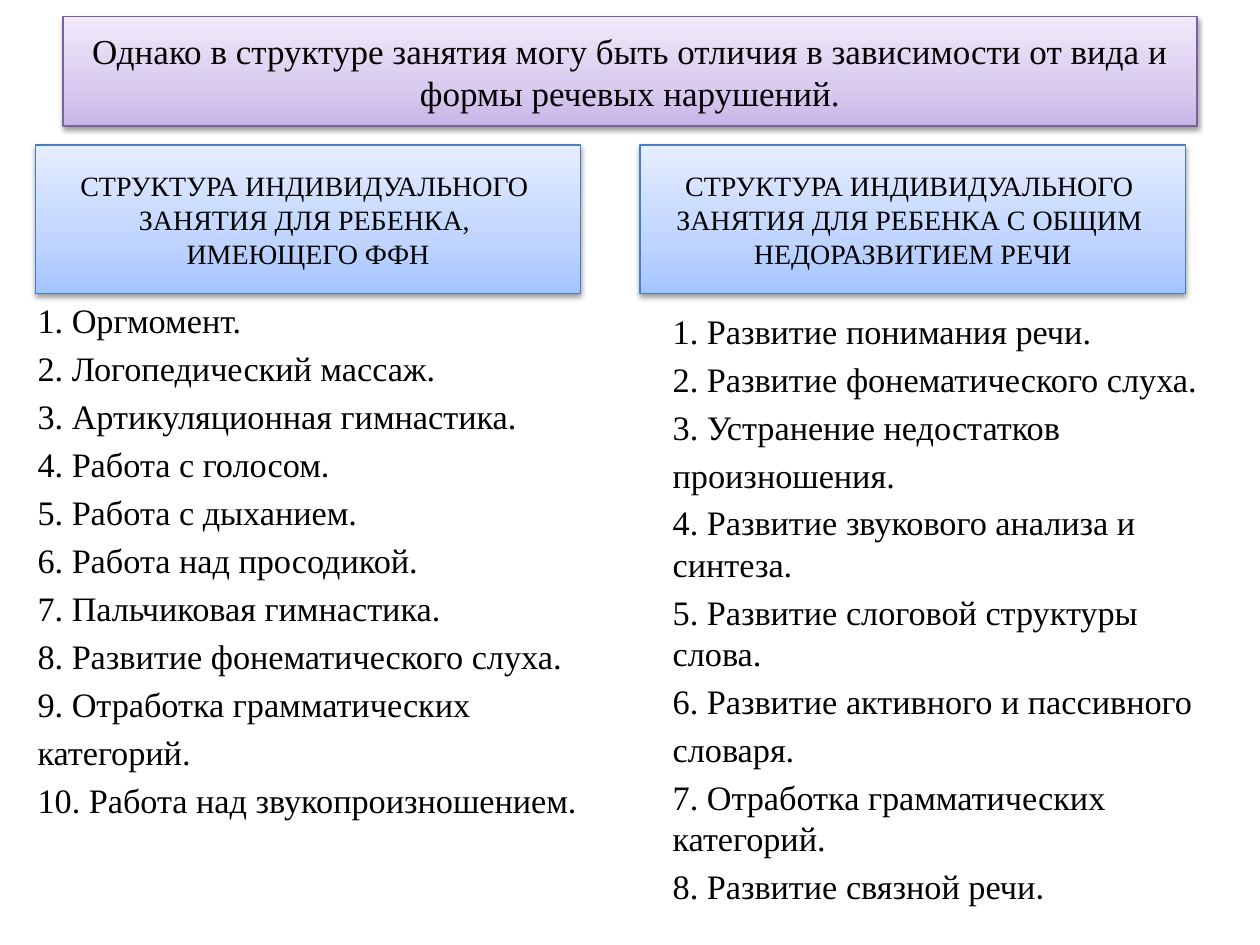
"""Build a slide comparing two individual speech lesson structures."""
from lxml import etree
from pptx import Presentation
from pptx.dml.color import RGBColor
from pptx.enum.shapes import MSO_SHAPE
from pptx.enum.text import MSO_ANCHOR, PP_ALIGN
from pptx.oxml import parse_xml
from pptx.oxml.ns import nsdecls, qn
from pptx.util import Inches, Pt

BLACK = RGBColor(0x00, 0x00, 0x00)
PURPLE_LINE = RGBColor(0x7D, 0x60, 0xA0)
BLUE_LINE = RGBColor(0x4B, 0x7E, 0xBC)
PURPLES = [RGBColor(0xC9, 0xB5, 0xE8), RGBColor(0xD8, 0xCB, 0xEE), RGBColor(0xF0, 0xEA, 0xF9)]
BLUES = [RGBColor(0xA4, 0xC4, 0xFF), RGBColor(0xBF, 0xD4, 0xFF), RGBColor(0xE6, 0xEE, 0xFF)]
STOPS = [0, 35, 100]
SHADOW = (
    f'<a:outerShdw {nsdecls("a")} blurRad="40000" dist="20000" dir="5400000" rotWithShape="0">'
    '<a:srgbClr val="000000"><a:alpha val="38000"/></a:srgbClr></a:outerShdw>'
)


def write_lines(sp, lines, size, align, anchor, space):
    tf = sp.text_frame
    for name, value in {"word_wrap": True, "vertical_anchor": anchor}.items():
        setattr(tf, name, value)
    for i, line in enumerate(lines):
        p = tf.add_paragraph() if i else tf.paragraphs[0]
        p.alignment = align
        p.space_before = Pt(space if i else 0)
        r = p.add_run()
        r.text = line
        for name, value in {"name": "Times New Roman", "size": Pt(size)}.items():
            setattr(r.font, name, value)
        r.font.color.rgb = BLACK


def add_panel(s, box, colors, line_color, lines, size):
    sp = s.shapes.add_shape(MSO_SHAPE.RECTANGLE, *map(Inches, box))
    sp.fill.gradient()
    sp.fill.gradient_angle = 90
    stops = sp._element.spPr.find(".//" + qn("a:gsLst"))
    for stop in list(stops):
        stops.remove(stop)
    for pos, color in zip(STOPS, colors):
        gs = etree.SubElement(stops, qn("a:gs"), pos=str(pos * 1000))
        etree.SubElement(gs, qn("a:srgbClr"), val=str(color))
    sp.line.color.rgb = line_color
    sp.line.width = Pt(0.75)
    sp.shadow.inherit = False
    sp._element.spPr.find(qn("a:effectLst")).append(parse_xml(SHADOW))
    write_lines(sp, lines, size, PP_ALIGN.CENTER, MSO_ANCHOR.MIDDLE, 0)


prs = Presentation()
prs.slide_width, prs.slide_height = Inches(10), Inches(7.5)
s = prs.slides.add_slide(prs.slide_layouts[6])

title = "Однако в структуре занятия могу быть отличия в зависимости от вида и формы речевых нарушений."
add_panel(s, (0.5, 0.13, 9, 0.87), PURPLES, PURPLE_LINE, [title], 20)

columns = [
    ((0.2, 2.33, 4.57, 5.04), [
        "1. Оргмомент.",
        "2. Логопедический массаж.",
        "3. Артикуляционная гимнастика.",
        "4. Работа с голосом.",
        "5. Работа с дыханием.",
        "6. Работа над просодикой.",
        "7. Пальчиковая гимнастика.",
        "8. Развитие фонематического слуха.",
        "9. Отработка грамматических",
        "категорий.",
        "10. Работа над звукопроизношением.",
    ]),
    ((5.24, 2.41, 4.42, 4.79), [
        "1. Развитие понимания речи.",
        "2. Развитие фонематического слуха.",
        "3. Устранение недостатков",
        "произношения.",
        "4. Развитие звукового анализа и синтеза.",
        "5. Развитие слоговой структуры слова.",
        "6. Развитие активного и пассивного",
        "словаря.",
        "7. Отработка грамматических категорий.",
        "8. Развитие связной речи",
    ]),
]
for box, lines in columns:
    sp = s.shapes.add_textbox(*map(Inches, box))
    write_lines(sp, lines, 19.6, PP_ALIGN.LEFT, MSO_ANCHOR.TOP, 3.92)

r = sp.text_frame.paragraphs[-1].add_run()
r.text = "."
for name, value in {"name": "Calibri", "size": Pt(19.6)}.items():
    setattr(r.font, name, value)
r.font.color.rgb = BLACK

headings = [
    (0.28, ["СТРУКТУРА ИНДИВИДУАЛЬНОГО ", "ЗАНЯТИЯ ДЛЯ РЕБЕНКА, ", "ИМЕЮЩЕГО ФФН"]),
    (5.08, ["СТРУКТУРА ИНДИВИДУАЛЬНОГО ", "ЗАНЯТИЯ ДЛЯ РЕБЕНКА С ОБЩИМ ", "НЕДОРАЗВИТИЕМ РЕЧИ"]),
]
for left, lines in headings:
    add_panel(s, (left, 1.15, 4.33, 1.18), BLUES, BLUE_LINE, lines, 16)

prs.save("out.pptx")
